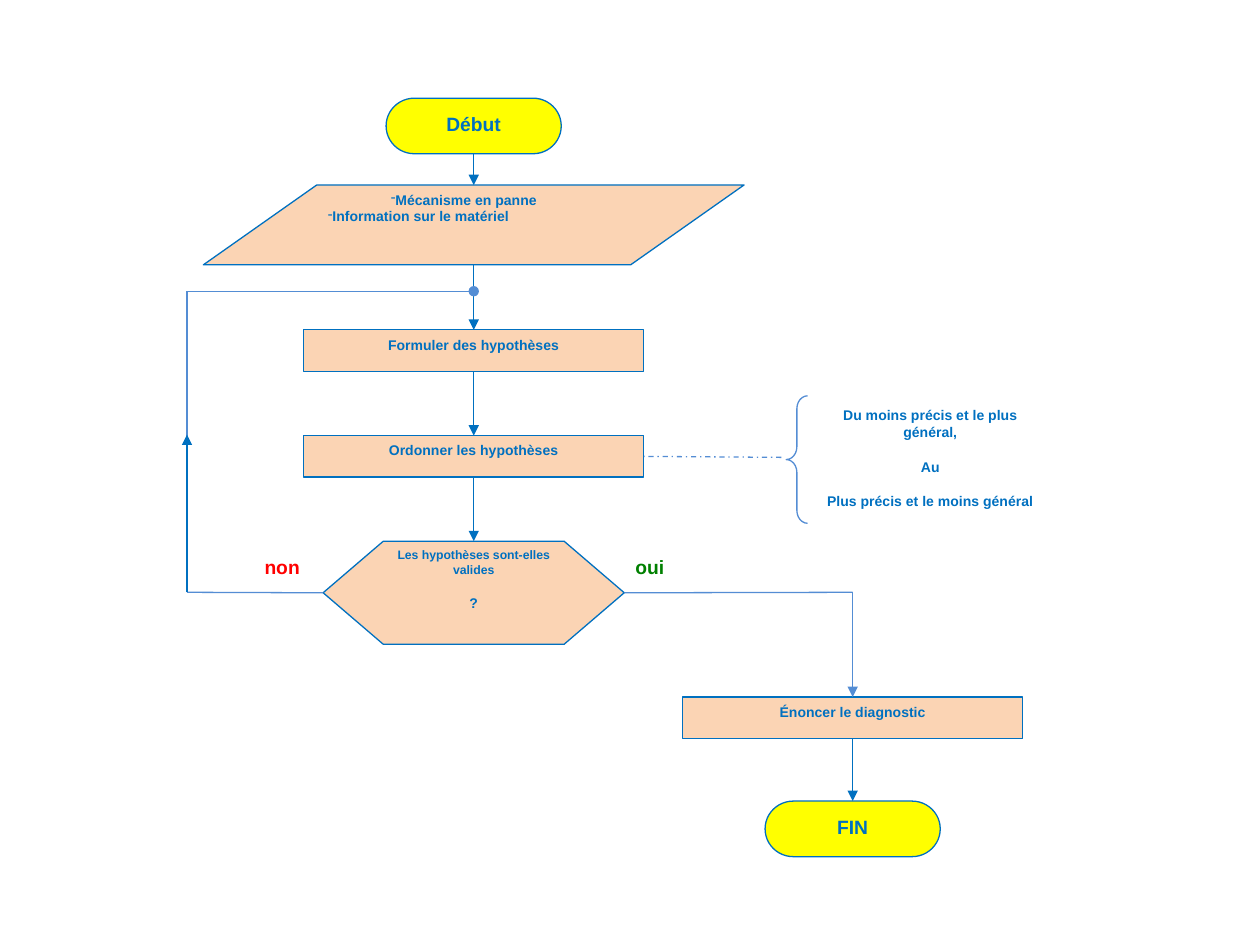
from collections import namedtuple
from dataclasses import dataclass

from lxml import etree
from pptx import Presentation
from pptx import util as u
from pptx.dml.color import RGBColor
from pptx.enum import dml, shapes, text
from pptx.oxml import ns

Box = namedtuple("Box", "left top width height")
Shape = shapes.MSO_SHAPE
TOP, LEFT, BOTTOM, RIGHT = range(4)


@dataclass(frozen=True)
class Theme:
    font: str = "Arial"
    blue: str = "0070C0"
    soft_blue: str = "548DD4"
    yellow: str = "FFFF00"
    peach: str = "FBD4B4"
    red: str = "FF0000"
    green: str = "008000"
    large: float = 11
    body: float = 8
    small: float = 7
    stroke: float = 0.75
    space_after: float = 10


THEME = Theme()
TERMINAL = (3.53, 1.12)
STEP = (6.86, 0.84)
LABEL = (1.96, 0.81)


def color(value):
    return RGBColor.from_string(value)


def write(shape, lines, sizes, ink=THEME.blue, align=text.PP_ALIGN.CENTER,
          after=THEME.space_after):
    frame = shape.text_frame
    frame.word_wrap = True
    frame.vertical_anchor = text.MSO_ANCHOR.TOP
    frame.text = "\n".join(lines)
    for para, size in zip(frame.paragraphs, sizes):
        para.alignment = align
        para.space_after = u.Pt(after)
        for span in para.runs:
            span.font.name = THEME.font
            span.font.size = u.Pt(size)
            span.font.bold = True
            span.font.color.rgb = color(ink)


def add_bullet(para, margin):
    props = para._p.get_or_add_pPr()
    props.set("marL", str(u.Cm(margin)))
    props.set("indent", "0")
    tint = etree.SubElement(props, ns.qn("a:buClr"))
    etree.SubElement(tint, ns.qn("a:srgbClr"), val=THEME.blue)
    etree.SubElement(props, ns.qn("a:buChar"), char="-")


def add_outline(page, kind, box, fill=None, ink=THEME.blue):
    shape = page.shapes.add_shape(kind, *map(u.Cm, box))
    shape.shadow.inherit = False
    if fill:
        shape.fill.solid()
        shape.fill.fore_color.rgb = color(fill)
    else:
        shape.fill.background()
    shape.line.color.rgb = color(ink)
    shape.line.width = u.Pt(THEME.stroke)
    return shape


def add_node(page, kind, axis, top, size, lines, sizes, fill=THEME.peach):
    width, height = size
    shape = add_outline(page, kind, Box(axis - width / 2, top, width, height), fill)
    write(shape, lines, sizes)
    return shape


def add_terminal(page, axis, top, label):
    return add_node(page, Shape.FLOWCHART_TERMINATOR, axis, top, TERMINAL,
                    [label], [THEME.large], THEME.yellow)


def add_step(page, axis, top, label):
    return add_node(page, Shape.RECTANGLE, axis, top, STEP, [label], [THEME.body])


def add_text(page, box, lines, sizes, **style):
    area = page.shapes.add_textbox(*map(u.Cm, box))
    write(area, lines, sizes, **style)
    return area


def add_line(page, start, end, ink=THEME.blue, tail=None, dash=None,
             begin=None, finish=None):
    line = page.shapes.add_connector(shapes.MSO_CONNECTOR.STRAIGHT,
                                     *map(u.Cm, (*start, *end)))
    if begin:
        line.begin_connect(*begin)
    if finish:
        line.end_connect(*finish)
    line.line.color.rgb = color(ink)
    line.line.width = u.Pt(THEME.stroke)
    if dash:
        line.line.dash_style = dash
    props = line._element.spPr
    if tail:
        etree.SubElement(props.find(ns.qn("a:ln")), ns.qn("a:tailEnd"), type=tail)
    etree.SubElement(props, ns.qn("a:effectLst"))
    return line


def draw_input(page, box):
    shape = add_outline(page, Shape.PARALLELOGRAM, box, THEME.peach)
    shape.adjustments[0] = 1.42
    area = add_text(page, Box(box.left + 2.26, box.top, 7.42, box.height),
                    ["Mécanisme en panne", "Information sur le matériel"],
                    [THEME.body] * 2, align=text.PP_ALIGN.LEFT, after=0)
    first, second = area.text_frame.paragraphs
    first.level = 1
    add_bullet(first, 1.27)
    add_bullet(second, 0)


def draw_main_column(page, box):
    axis = box.left + box.width / 2
    input_box = Box(box.left, box.top + 1.75, box.width, 1.61)
    input_bottom = input_box.top + input_box.height
    first_step, pitch = box.top + 4.67, 2.13

    start = add_terminal(page, axis, box.top, "Début")
    draw_input(page, input_box)
    formulate, order = [
        add_step(page, axis, first_step + row * pitch, label)
        for row, label in enumerate(["Formuler des hypothèses",
                                     "Ordonner les hypothèses"])]
    decision = add_node(page, Shape.FLOWCHART_PREPARATION, axis,
                        first_step + 2 * pitch, (6.07, 2.08),
                        ["Les hypothèses sont-elles valides", "?"],
                        [THEME.small, THEME.body])

    add_line(page, (axis, box.top), (axis, input_box.top), tail="triangle",
             begin=(start, BOTTOM))
    add_line(page, (axis, input_bottom), (axis, first_step), tail="triangle",
             finish=(formulate, TOP))
    for upper, lower in [(formulate, order), (order, decision)]:
        add_line(page, (axis, first_step), (axis, first_step), tail="triangle",
                 begin=(upper, BOTTOM), finish=(lower, TOP))
    return order, decision


def draw_loop(page, box, decision):
    right, bottom = box.left + box.width, box.top + box.height
    corner = (box.left, bottom)
    add_line(page, (right, bottom), corner, THEME.soft_blue, begin=(decision, LEFT))
    add_line(page, (box.left, box.top), corner, THEME.soft_blue)
    add_line(page, corner, (box.left, box.top + 2.89), tail="triangle")
    add_line(page, (box.left, box.top), (right, box.top), THEME.soft_blue, "oval")
    add_text(page, Box(box.left + 0.94, bottom - 0.87, *LABEL), ["non"],
             [THEME.large], ink=THEME.red)


def draw_diagnosis(page, box, decision):
    axis = box.left + box.width - STEP[0] / 2
    step_top = box.top + 2.11
    corner = (axis, box.top)
    diagnosis = add_step(page, axis, step_top, "Énoncer le diagnostic")
    finish = add_terminal(page, axis, box.top + box.height - TERMINAL[1], "FIN")
    add_line(page, (box.left, box.top), corner, THEME.soft_blue,
             begin=(decision, RIGHT))
    add_line(page, corner, (axis, step_top), THEME.soft_blue, "triangle",
             finish=(diagnosis, TOP))
    add_line(page, corner, corner, tail="triangle",
             begin=(diagnosis, BOTTOM), finish=(finish, TOP))
    add_text(page, Box(box.left - 0.46, box.top - 0.87, *LABEL), ["oui"],
             [THEME.large], ink=THEME.green)


def draw_note(page, box, order):
    brace = add_outline(page, Shape.LEFT_BRACE,
                        Box(box.left, box.top, 0.43, box.height),
                        ink=THEME.soft_blue)
    brace.adjustments[0] = 0.6
    add_text(page, Box(box.left + 0.43, box.top + 0.1, box.width - 0.43, 2.44),
             ["Du moins précis et le plus général,", "Au",
              "Plus précis et le moins général"], [THEME.body] * 3)
    level = box.top + 1.24
    add_line(page, (box.left - 0.1, level), (box.left - 2.85, level),
             THEME.soft_blue, dash=dml.MSO_LINE.DASH_DOT, finish=(order, RIGHT))


def main():
    deck = Presentation()
    deck.slide_width, deck.slide_height = u.Cm(25.4), u.Cm(19.05)
    page = deck.slides.add_slide(deck.slide_layouts[6])
    order, decision = draw_main_column(page, Box(4.1, 1.98, 10.9, 11))
    draw_loop(page, Box(3.77, 5.87, 5.78, 6.07), decision)
    draw_diagnosis(page, Box(12.58, 11.94, 8.04, 5.33), decision)
    draw_note(page, Box(15.85, 7.98, 5.38, 2.57), order)
    deck.save("out.pptx")


if __name__ == "__main__":
    main()
